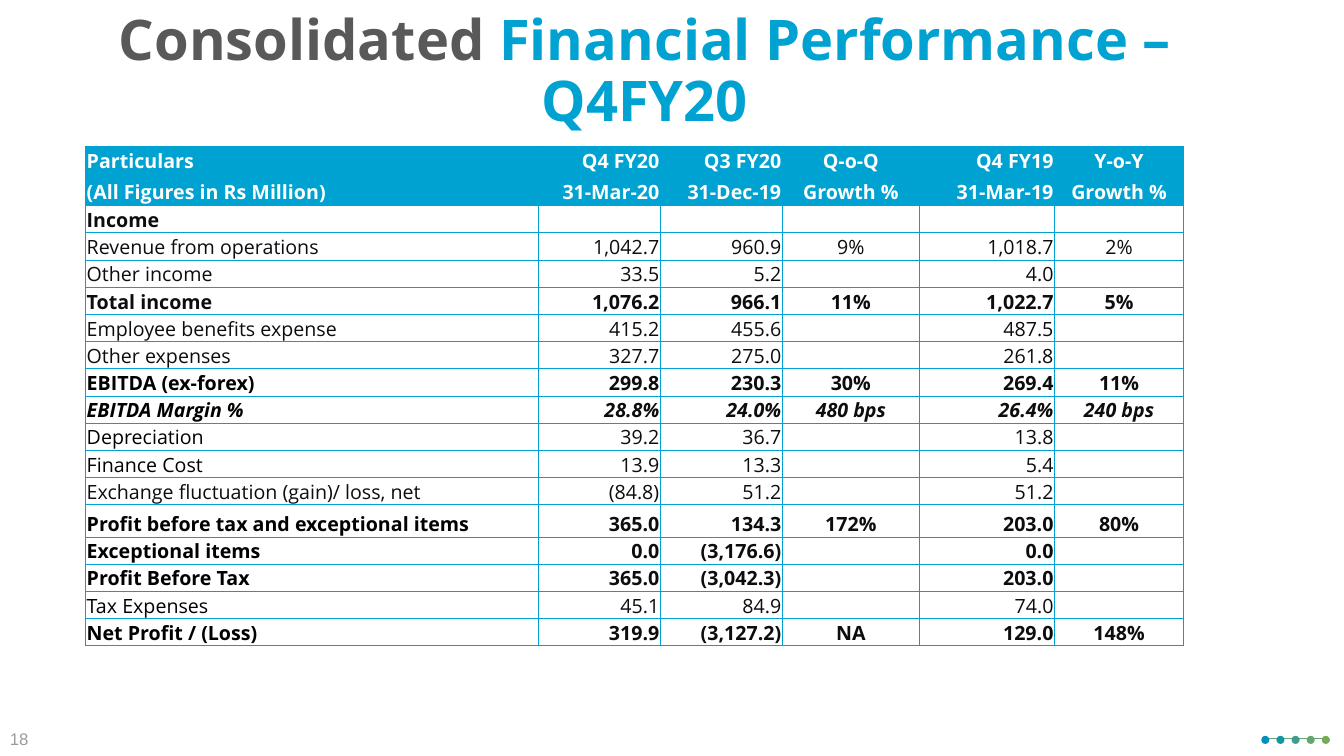
"""Build the consolidated quarterly financial performance slide."""
from lxml import etree
from pptx import Presentation
from pptx import util as u
from pptx.dml.color import RGBColor
from pptx.enum import shapes, text
from pptx.oxml import ns

COLORS = {
    "blue": "00A2D2", "grey": "595959", "page": "9B9B9B", "white": "FFFFFF",
    "ink": "0D0D0D", "black": "000000", "link": "64A570",
}
DOT_COLORS = ["008FBC", "1396A4", "409C8E", "64A570", "75AA57"]
LEFT, RIGHT, CENTER = text.PP_ALIGN.LEFT, text.PP_ALIGN.RIGHT, text.PP_ALIGN.CENTER
COLUMNS = [(4.49, LEFT), (1.21, RIGHT), (1.21, RIGHT), (1.36, CENTER), (1.34, RIGHT), (1.28, CENTER)]

# Row flags: h header, b bold, i italic, k black label, t tall row
ROWS = [
    ("hb", "Particulars", "Q4 FY20", "Q3 FY20", "Q-o-Q", "Q4 FY19", "Y-o-Y"),
    ("hbt", "(All Figures in Rs Million)", "31-Mar-20", "31-Dec-19", "Growth %", "31-Mar-19", "Growth %"),
    ("b", "Income", "", "", "", "", ""),
    ("", "Revenue from operations", "1,042.7", "960.9", "9%", "1,018.7", "2%"),
    ("", "Other income", "33.5", "5.2", "", "4.0", ""),
    ("b", "Total income", "1,076.2", "966.1", "11%", "1,022.7", "5%"),
    ("", "Employee benefits expense", "415.2", "455.6", "", "487.5", ""),
    ("", "Other expenses", "327.7", "275.0", "", "261.8", ""),
    ("bk", "EBITDA (ex-forex)", "299.8", "230.3", "30%", "269.4", "11%"),
    ("bik", "EBITDA Margin %", "28.8%", "24.0%", "480 bps", "26.4%", "240 bps"),
    ("k", "Depreciation", "39.2", "36.7", "", "13.8", ""),
    ("k", "Finance Cost", "13.9", "13.3", "", "5.4", ""),
    ("", "Exchange fluctuation (gain)/ loss, net", "(84.8)", "51.2", "", "51.2", ""),
    ("bkt", "Profit before tax and exceptional items", "365.0", "134.3", "172%", "203.0", "80%"),
    ("bk", "Exceptional items", "0.0", "(3,176.6)", "", "0.0", ""),
    ("bk", "Profit Before Tax", "365.0", "(3,042.3)", "", "203.0", ""),
    ("k", "Tax Expenses", "45.1", "84.9", "", "74.0", ""),
    ("bk", "Net Profit / (Loss)", "319.9", "(3,127.2)", "NA", "129.0", "148%"),
]


class SlideBuilder:
    """Holds the style and the current slide."""

    def __init__(self, slide, font="Open Sans"):
        """Keep the slide and its main font."""
        self.slide = slide
        self.font = font

    def rgb(self, color):
        """Return a named or hex colour."""
        return RGBColor.from_string(COLORS.get(color, color))

    def text(self, box, parts, size, font=None, bold=False, align=LEFT, spacing=None):
        """Add one paragraph of coloured parts."""
        frame = self.slide.shapes.add_textbox(*map(u.Inches, box)).text_frame
        frame.word_wrap = True
        frame.vertical_anchor = text.MSO_ANCHOR.MIDDLE
        paragraph = frame.paragraphs[0]
        paragraph.alignment = align
        paragraph.line_spacing = spacing
        paragraph.font.name = font or self.font
        paragraph.font.size = u.Pt(size)
        paragraph.font.bold = bold
        for wording, color in parts:
            run = paragraph.add_run()
            run.text = wording
            run.font.color.rgb = self.rgb(color)

    def line(self, start, end, color, width):
        """Add a straight line without a shadow."""
        link = self.slide.shapes.add_connector(
            shapes.MSO_CONNECTOR.STRAIGHT, *map(u.Inches, start + end))
        link.line.color.rgb = self.rgb(color)
        link.line.width = u.Pt(width)
        etree.SubElement(link._element.spPr, ns.qn("a:effectLst"))

    def dot(self, left, top, size, color):
        """Add a filled circle without an outline."""
        dot = self.slide.shapes.add_shape(
            shapes.MSO_SHAPE.OVAL, *map(u.Inches, (left, top, size, size)))
        dot.shadow.inherit = False
        dot.fill.solid()
        dot.fill.fore_color.rgb = self.rgb(color)
        dot.line.fill.background()

    def borders(self, cell, color, width):
        """Draw all four borders of a cell."""
        properties = cell._tc.get_or_add_tcPr()
        for side in ("lnL", "lnR", "lnT", "lnB"):
            border = etree.SubElement(properties, ns.qn(f"a:{side}"), w=str(u.Pt(width)))
            fill = etree.SubElement(border, ns.qn("a:solidFill"))
            etree.SubElement(fill, ns.qn("a:srgbClr"), val=COLORS[color])

    def cell(self, cell, wording, flags, align, color, size=14):
        """Fill and style one table cell."""
        cell.margin_left = cell.margin_right = cell.margin_top = u.Inches(0.01)
        cell.margin_bottom = 0
        cell.vertical_anchor = text.MSO_ANCHOR.BOTTOM
        self.borders(cell, "blue", 0.5)
        if "h" in flags:
            cell.fill.solid()
            cell.fill.fore_color.rgb = self.rgb("blue")
        else:
            cell.fill.background()
        paragraph = cell.text_frame.paragraphs[0]
        paragraph.alignment = align
        font = paragraph.font
        font.name, font.size = self.font, u.Pt(size)
        font.bold, font.italic = "b" in flags, "i" in flags
        font.color.rgb = self.rgb(color)
        if wording:
            paragraph.add_run().text = wording
        else:
            etree.SubElement(paragraph._p, ns.qn("a:endParaRPr"), sz=str(size * 100))

    def table(self, box, columns, rows):
        """Add the table of figures."""
        table = self.slide.shapes.add_table(
            len(rows), len(columns), *map(u.Inches, box)).table
        table.first_row = table.horz_banding = False
        for column, (width, _) in zip(table.columns, columns):
            column.width = u.Inches(width)
        for row, (flags, *wordings) in zip(table.rows, rows):
            row.height = u.Inches(0.32 if "t" in flags else 0.27)
            for index, (cell, wording) in enumerate(zip(row.cells, wordings)):
                label_color = "black" if "k" in flags and index == 0 else "ink"
                color = "white" if "h" in flags else label_color
                self.cell(cell, wording, flags, columns[index][1], color)


def main():
    """Build and save the slide."""
    deck = Presentation()
    deck.slide_width, deck.slide_height = u.Inches(13.33), u.Inches(7.5)
    builder = SlideBuilder(deck.slides.add_slide(deck.slide_layouts[6]))

    builder.line((12.59, 7.33), (13.11, 7.33), "link", 0.5)
    for index, color in enumerate(DOT_COLORS):
        builder.dot(12.51 + 0.15 * index, 7.3, 0.08, color)

    title = [("Consolidated ", "grey"), ("Financial Performance – Q4FY20", "blue")]
    builder.text((0, 0, 12.79, 1.45), title, 40, bold=True, align=CENTER, spacing=0.9)
    builder.text((0, 7.13, 0.61, 0.4), [("18", "page")], 12, font="Arial")
    builder.table((0.85, 1.45, 10.89, 4.96), COLUMNS, ROWS)
    deck.save("out.pptx")


if __name__ == "__main__":
    main()
